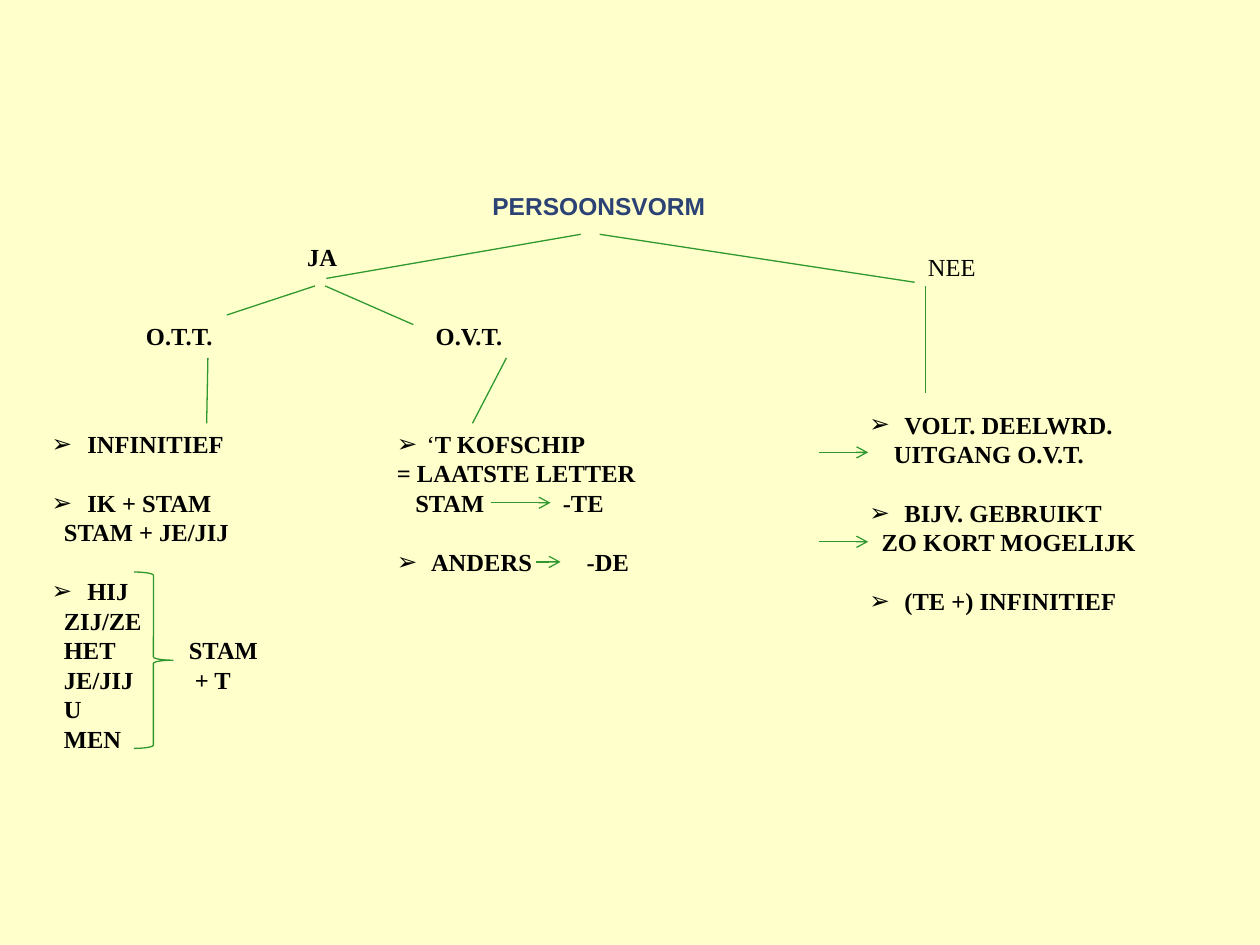
"""Build a Dutch verb-spelling decision tree slide."""
from lxml import etree
from pptx import Presentation
from pptx.dml.color import RGBColor
from pptx.enum import shapes, text
from pptx.oxml import ns
from pptx.util import Pt

COLOURS = {"background": "FFFFCC", "title": "2C4274", "text": "000000", "line": "2F982F"}
LINE_PITCH = 16.85
LIST_TOP = 241.5
BODY_FONT = {"name": "Times New Roman", "size": Pt(14), "bold": True}
TITLE_FONT = {"name": "Arial", "size": Pt(14), "bold": True}
FRAME_FORMAT = {
    "word_wrap": True,
    "auto_size": text.MSO_AUTO_SIZE.NONE,
    "margin_left": Pt(7.2),
    "margin_right": Pt(7.2),
    "margin_top": Pt(3.6),
    "margin_bottom": Pt(3.6),
}
LABELS = [
    ("JA", 168.5, 135, 45, True),
    ("NEE", 523.2, 140.4, 100, False),
    ("O.T.T.", 76.3, 180, 85, True),
    ("O.V.T.", 241.9, 180, 95, True),
]
ROW_LABELS = [
    ("STAM", 100.8, 7),
    ("+ T", 104.2, 8),
    ("-TE", 314.5, 2),
    ("-DE", 328.2, 4),
]
LISTS = [
    ((22.3, LIST_TOP, 180, 194), [
        (True, 20.4, "INFINITIEF"),
        (True, 20.4, "IK + STAM"),
        (False, 7, "STAM + JE/JIJ"),
        (True, 20.4, "HIJ"),
        (False, 7, "ZIJ/ZE"),
        (False, 7, "HET"),
        (False, 7, "JE/JIJ"),
        (False, 7, "U"),
        (False, 7, "MEN"),
    ]),
    ((219.6, LIST_TOP, 220, 92), [
        (True, 17, "‘T KOFSCHIP"),
        (False, 0, "= LAATSTE LETTER"),
        (False, 10.5, "STAM"),
        (True, 19.5, "ANDERS"),
    ]),
    ((489.6, 230.4, 190, 126), [
        (True, 20, "VOLT. DEELWRD."),
        (False, 14, "UITGANG O.V.T."),
        (True, 20, "BIJV. GEBRUIKT"),
        (False, 7, "ZO KORT MOGELIJK"),
        (True, 20, "(TE +) INFINITIEF"),
    ]),
]
BRANCHES = [
    (331.9, 133.9, 186.5, 159.1),
    (342.7, 133.9, 522.7, 161.3),
    (180, 163.4, 129.6, 180),
    (185.8, 163.4, 236.2, 185.5),
    (118.8, 204.5, 118.1, 241.9),
    (289.4, 204.5, 270, 241.9),
    (528.8, 163.4, 528.8, 224.6),
]
ARROWS = [
    (280.8, 287.3, 314.6, 287.3),
    (306, 321.1, 320.4, 321.1),
    (468, 258.5, 496.1, 258.5),
    (468, 309.6, 496.1, 309.6),
]


def set_values(target, values):
    """Set each named attribute on the target."""
    for name, value in values.items():
        setattr(target, name, value)


def colour(name):
    """Return the named palette colour."""
    return RGBColor.from_string(COLOURS[name])


def place(shape, box):
    """Move and size a shape in points."""
    set_values(shape, dict(zip(("left", "top", "width", "height"), map(Pt, box))))


def format_frame(frame, anchor):
    """Apply the shared text frame format."""
    set_values(frame, {**FRAME_FORMAT, "vertical_anchor": anchor})


def add_run(paragraph, content, font, colour_name="text"):
    """Add a formatted run."""
    run = paragraph.add_run()
    run.text = content
    set_values(run.font, font)
    run.font.color.rgb = colour(colour_name)


def format_paragraph(paragraph, bulleted=False, margin=0, before=0,
                     alignment=text.PP_ALIGN.LEFT):
    """Set the spacing, indent and bullet of a paragraph."""
    set_values(paragraph, {"alignment": alignment, "line_spacing": Pt(LINE_PITCH),
                           "space_before": Pt(before), "space_after": Pt(0)})
    properties = paragraph._p.get_or_add_pPr()
    properties.set("marL", str(Pt(margin)))
    properties.set("indent", str(Pt(-margin if bulleted else 0)))
    if bulleted:
        etree.SubElement(properties, ns.qn("a:buFont"), typeface="Arial")
        etree.SubElement(properties, ns.qn("a:buChar"), char="➢")
    else:
        etree.SubElement(properties, ns.qn("a:buNone"))


def fill_title(shape):
    """Place and fill the title placeholder."""
    place(shape, (241, 105.3, 202.4, 24))
    format_frame(shape.text_frame, text.MSO_ANCHOR.MIDDLE)
    paragraph = shape.text_frame.paragraphs[0]
    format_paragraph(paragraph, alignment=text.PP_ALIGN.CENTER)
    add_run(paragraph, "PERSOONSVORM", TITLE_FONT, "title")


def add_label(slide, content, left, top, width, bold):
    """Add a one-line text box."""
    shape = slide.shapes.add_textbox(Pt(left), Pt(top), Pt(width), Pt(24.5))
    format_frame(shape.text_frame, text.MSO_ANCHOR.TOP)
    paragraph = shape.text_frame.paragraphs[0]
    format_paragraph(paragraph)
    add_run(paragraph, content, {**BODY_FONT, "bold": bold})


def fill_list(shape, box, lines):
    """Place and fill a body placeholder, with a gap above each later bullet."""
    place(shape, box)
    frame = shape.text_frame
    format_frame(frame, text.MSO_ANCHOR.TOP)
    for index, (bulleted, margin, content) in enumerate(lines):
        paragraph = frame.add_paragraph() if index else frame.paragraphs[0]
        before = LINE_PITCH if bulleted and index else 0
        format_paragraph(paragraph, bulleted, margin, before)
        if content.startswith("‘"):
            add_run(paragraph, "‘", {**BODY_FONT, "bold": False})
            content = content[1:]
        add_run(paragraph, content, BODY_FONT)


def format_line(line):
    """Apply the shared line colour and width."""
    line.color.rgb = colour("line")
    line.width = Pt(0.75)


def add_line(slide, points, arrow=False):
    """Add a straight connector, optionally with an arrowhead."""
    connector = slide.shapes.add_connector(shapes.MSO_CONNECTOR.STRAIGHT, *map(Pt, points))
    format_line(connector.line)
    if arrow:
        etree.SubElement(connector.line._get_or_add_ln(), ns.qn("a:tailEnd"), type="arrow")
    etree.SubElement(connector._element.spPr, ns.qn("a:effectLst"))


def add_brace(slide):
    """Add the brace that groups the pronouns."""
    brace = slide.shapes.add_shape(shapes.MSO_SHAPE.RIGHT_BRACE,
                                   Pt(76.5), Pt(326.9), Pt(22.3), Pt(100.8))
    brace.shadow.inherit = False
    brace.fill.background()
    format_line(brace.line)


def main():
    """Build and save the slide."""
    presentation = Presentation()
    set_values(presentation, {"slide_width": Pt(720), "slide_height": Pt(540)})
    slide = presentation.slides.add_slide(presentation.slide_layouts.get_by_name("Comparison"))
    slide.background.fill.solid()
    slide.background.fill.fore_color.rgb = colour("background")
    fill_title(slide.shapes.title)
    *bodies, unused = list(slide.placeholders)[1:]
    unused._element.getparent().remove(unused._element)
    for body, (box, lines) in zip(bodies, LISTS):
        fill_list(body, box, lines)
    for label in LABELS:
        add_label(slide, *label)
    for content, left, row in ROW_LABELS:
        add_label(slide, content, left, LIST_TOP + row * LINE_PITCH, 65, True)
    for points in BRANCHES:
        add_line(slide, points)
    for points in ARROWS:
        add_line(slide, points, arrow=True)
    add_brace(slide)
    presentation.save("out.pptx")


if __name__ == "__main__":
    main()
